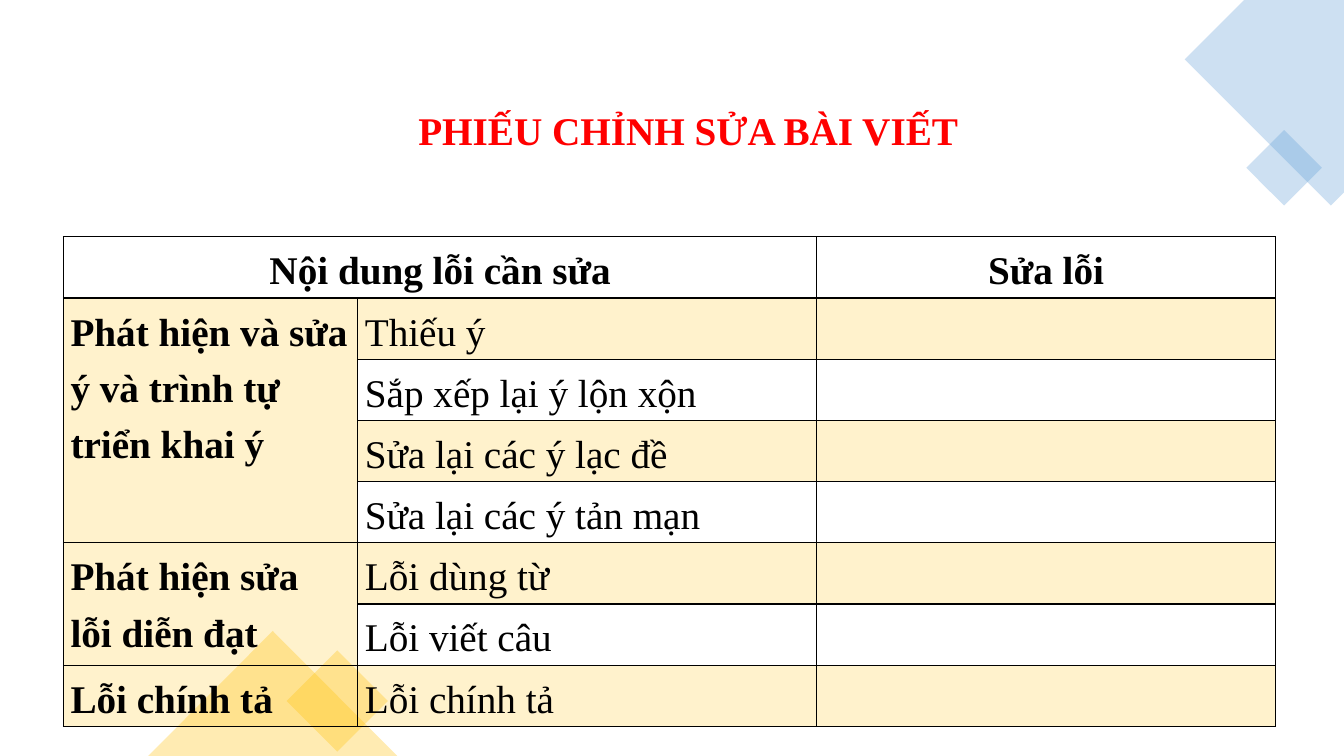
from lxml import etree
from pptx import Presentation
from pptx import util as u
from pptx.dml.color import RGBColor
from pptx.enum import shapes, text
from pptx.oxml.ns import qn

FONT = "Times New Roman"
BLUE, YELLOW, RED, BLACK = "5B9BD5", "FFC000", "FF0000", "000000"

HEADERS = [(0, "Nội dung lỗi cần sửa"), (2, "Sửa lỗi")]
GROUPS = [
    ("Phát hiện và sửa ý và trình tự triển khai ý",
     ["Thiếu ý", "Sắp xếp lại ý lộn xộn", "Sửa lại các ý lạc đề", "Sửa lại các ý tản mạn"]),
    ("Phát hiện sửa\nlỗi diễn đạt", ["Lỗi dùng từ", "Lỗi viết câu"]),
    ("Lỗi chính tả", ["Lỗi chính tả"]),
]


def px(n):
    return u.Emu(n * 9144)


def rgb(code):
    return RGBColor.from_string(code)


def paint(owner, element, code, percent):
    owner.fill.solid()
    owner.fill.fore_color.rgb = rgb(code)
    color = next(element.iter(qn("a:srgbClr")))
    etree.SubElement(color, qn("a:alpha"), val=str(percent * 1000))


def finish_shape(sp, code):
    sp.shadow.inherit = False
    sp.line.fill.background()
    paint(sp, sp.element, code, 30)


def write(p, words, color=BLACK, bold=False, align=text.PP_ALIGN.LEFT):
    p.alignment = align
    p.line_spacing = 1.3
    p.space_before = u.Pt(0)
    p.space_after = u.Pt(10)
    for i, line in enumerate(words.split("\n")):
        if i:
            p.add_line_break()
        r = p.add_run()
        r.text = line
        r.font.name = FONT
        r.font.size = u.Pt(28)
        r.font.bold = bold
        r.font.color.rgb = rgb(color)


def add_tilted_square(s, x, y, side, code):
    sp = s.shapes.add_shape(shapes.MSO_SHAPE.RECTANGLE, px(x), px(y), px(side), px(side))
    sp.rotation = 45
    finish_shape(sp, code)


def add_top_corner(s, x, y):
    outline = [(158, 0), (59, 0), (0, 59), (145, 204), (158, 191)]
    points = [(x + dx, y + dy) for dx, dy in outline]
    builder = s.shapes.build_freeform(*points[0], scale=px(1))
    builder.add_line_segments(points[1:], close=True)
    finish_shape(builder.convert_to_shape(), BLUE)
    add_tilted_square(s, x + 72, y + 140, 53, BLUE)


def add_bottom_corner(s, x, y):
    add_tilted_square(s, x + 152, y + 34, 71, YELLOW)
    sp = s.shapes.add_shape(shapes.MSO_SHAPE.ISOSCELES_TRIANGLE,
                            px(x), px(y), px(247), px(124))
    finish_shape(sp, YELLOW)


def add_title(s, x, y, w, h):
    title = s.shapes.title
    title.left, title.top, title.width, title.height = px(x), px(y), px(w), px(h)
    tf = title.text_frame
    tf.word_wrap = True
    tf.auto_size = text.MSO_AUTO_SIZE.SHAPE_TO_FIT_TEXT
    tf.vertical_anchor = text.MSO_ANCHOR.TOP
    p = tf.paragraphs[0]
    write(p, "PHIẾU CHỈNH SỬA BÀI VIẾT", RED, True, text.PP_ALIGN.CENTER)
    pPr = p._p.get_or_add_pPr()
    pPr.set("marL", "0")
    pPr.set("indent", str(px(50)))


def style_cell(cell, shaded):
    cell.margin_left = cell.margin_right = px(7)
    cell.margin_top = cell.margin_bottom = 0
    if shaded:
        paint(cell, cell._tc, YELLOW, 20)
    else:
        cell.fill.background()
    tcPr = cell._tc.get_or_add_tcPr()
    for i, side in enumerate("LRTB"):
        ln = etree.Element(qn(f"a:ln{side}"), w=str(u.Pt(1)))
        fill = etree.SubElement(ln, qn("a:solidFill"))
        etree.SubElement(fill, qn("a:srgbClr"), val=BLACK)
        tcPr.insert(i, ln)


def add_checklist(s, x, y, columns, row_height):
    count = 1 + sum(len(items) for _, items in GROUPS)
    table = s.shapes.add_table(count, len(columns), px(x), px(y),
                               px(sum(columns)), px(row_height * count)).table
    table.first_row = table.horz_banding = False
    for column, width in zip(table.columns, columns):
        column.width = px(width)
    for i in range(count):
        table.rows[i].height = px(row_height)
        for j in range(len(columns)):
            style_cell(table.cell(i, j), i > 0 and (j == 0 or i % 2 == 1))

    table.cell(0, 0).merge(table.cell(0, 1))
    for j, words in HEADERS:
        write(table.cell(0, j).text_frame.paragraphs[0], words,
              bold=True, align=text.PP_ALIGN.CENTER)
    row = 1
    for label, items in GROUPS:
        if len(items) > 1:
            table.cell(row, 0).merge(table.cell(row + len(items) - 1, 0))
        write(table.cell(row, 0).text_frame.paragraphs[0], label, bold=True)
        for item in items:
            write(table.cell(row, 1).text_frame.paragraphs[0], item)
            row += 1


def main():
    prs = Presentation()
    prs.slide_width, prs.slide_height = px(1333), px(750)
    s = prs.slides.add_slide(prs.slide_layouts[5])
    add_top_corner(s, 1175, 0)
    add_bottom_corner(s, 147, 626)
    add_title(s, 63, 86, 1189, 65)
    add_checklist(s, 63, 235, [292, 455, 455], 60)
    prs.save("out.pptx")


if __name__ == "__main__":
    main()
